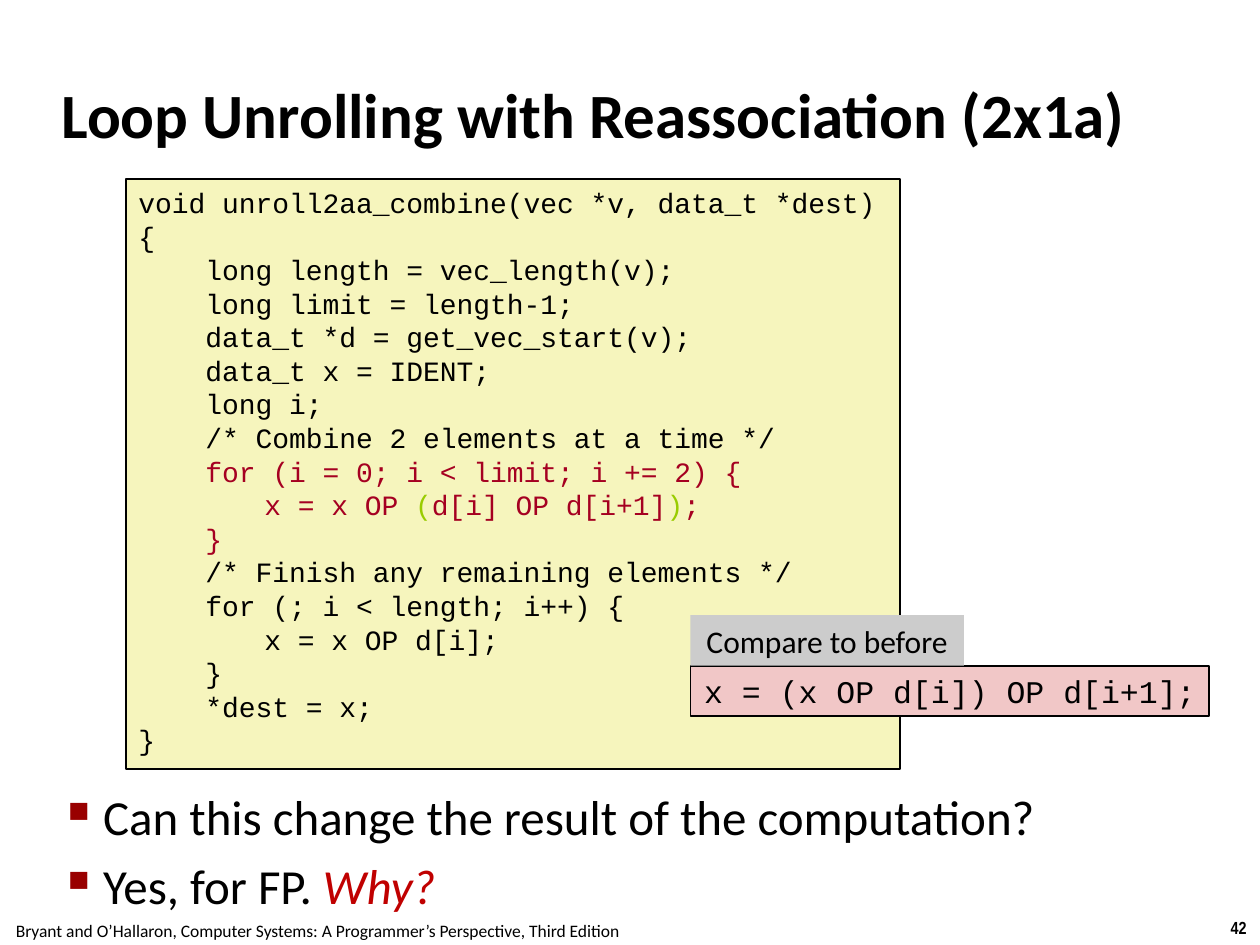
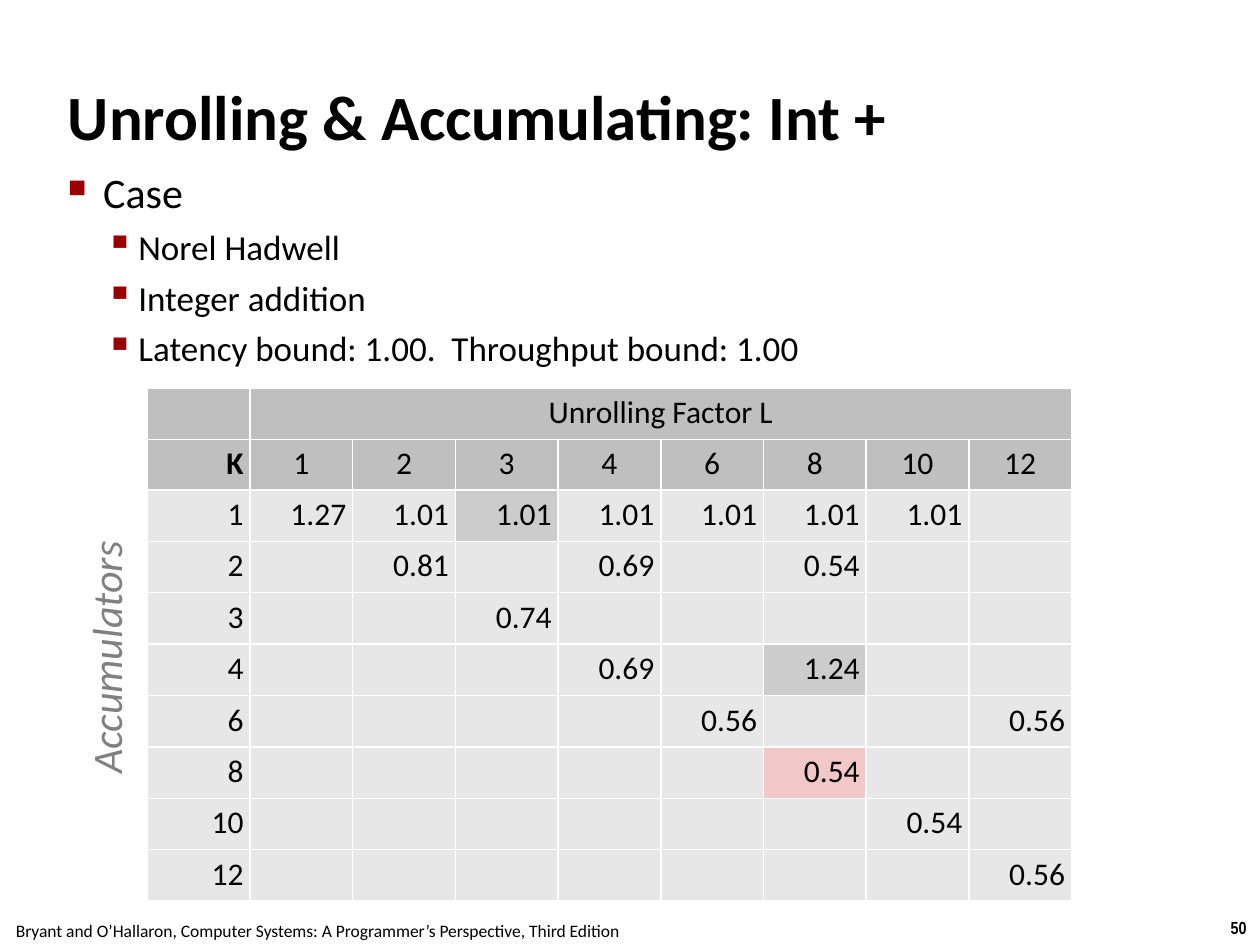
import pptx
import pptx.dml.color
import pptx.enum.shapes
import pptx.enum.text
import pptx.oxml
import pptx.oxml.ns
import pptx.util
from lxml import etree

Cm, Pt = pptx.util.Cm, pptx.util.Pt
ALIGN = pptx.enum.text.PP_ALIGN
ANCHOR = pptx.enum.text.MSO_ANCHOR

COLOURS = {
    "ink": "000000", "bullet": "990000", "why": "C00000", "loop": "A50021",
    "bracket": "99CC00", "code": "F6F5BD", "pink": "F1C7C7", "grey": "CCCCCC",
    "header": "BFBFBF", "cell": "E7E7E7", "white": "FFFFFF", "side": "808080",
}
BODY_FONT, CODE_FONT, NUMBER_FONT = "Calibri", "Courier New", "Arial Narrow"
FOOTER = "Bryant and O’Hallaron, Computer Systems: A Programmer’s Perspective, Third Edition"
TIGHT = (0.1, 0.1, 0.1, 0.1)
NORMAL = (0.25, 0.13, 0.25, 0.13)

# Each code line: indent level, then (text, colour) pieces
CODE = [
    (0, [("void unroll2aa_combine(vec *v, data_t *dest)", "ink")]),
    (0, [("{", "ink")]),
    (1, [("long length = vec_length(v);", "ink")]),
    (1, [("long limit = length-1;", "ink")]),
    (1, [("data_t *d = get_vec_start(v);", "ink")]),
    (1, [("data_t x = IDENT;", "ink")]),
    (1, [("long i;", "ink")]),
    (1, [("/* Combine 2 elements at a time */", "ink")]),
    (1, [("for (i = 0; i < limit; i += 2) {", "loop")]),
    (2, [("x = x OP ", "loop"), ("(", "bracket"), ("d[i] OP d[i+1]", "loop"),
         (")", "bracket"), (";", "loop")]),
    (1, [("}", "loop")]),
    (1, [("/* Finish any remaining elements */", "ink")]),
    (1, [("for (; i < length; i++) {", "ink")]),
    (2, [("x = x OP d[i];", "ink")]),
    (1, [("}", "ink")]),
    (1, [("*dest = x;", "ink")]),
    (0, [("}", "ink")]),
]
CODE_INDENTS = (0, 1.35, 2.54)

# Bulleted lines: level, size, then (text, colour, italic) pieces
QUESTIONS = [
    (0, 28, [("Can this change the result of the computation?", "ink", False)]),
    (0, 28, [("Yes, for FP. ", "ink", False), ("Why?", "why", True)]),
]
CASE = [
    (0, 24, [("Case", "ink", False)]),
    (1, 20, [("Norel Hadwell", "ink", False)]),
    (1, 20, [("Integer addition", "ink", False)]),
    (1, 20, [("Latency bound: 1.00.  Throughput bound: 1.00", "ink", False)]),
]
# Level: bullet, size in percent, left indent, hanging part, space before
BULLETS = [("■", 60, 0.71, 0.71, 6), ("▪", 110, 1.42, 0.66, 5)]

FACTORS = [1, 2, 3, 4, 6, 8, 10, 12]
# Accumulators K -> {unrolling factor L: cycles per element}
CYCLES = {
    1: {1: "1.27", 2: "1.01", 3: "1.01", 4: "1.01", 6: "1.01", 8: "1.01", 10: "1.01"},
    2: {2: "0.81", 4: "0.69", 8: "0.54"},
    3: {3: "0.74"},
    4: {4: "0.69", 8: "1.24"},
    6: {6: "0.56", 12: "0.56"},
    8: {8: "0.54"},
    10: {10: "0.54"},
    12: {12: "0.56"},
}
HIGHLIGHTS = {(1, 3): "grey", (4, 8): "grey", (8, 8): "pink"}
COLUMN_WIDTH, ROW_HEIGHT = 2.07, 1.02


def rgb(name):
    return pptx.dml.color.RGBColor.from_string(COLOURS[name])


def add_span(para, text, size, colour="ink", font=BODY_FONT, bold=False, italic=False):
    span = para.add_run()
    span.text = text
    span.font.size, span.font.name = Pt(size), font
    span.font.bold, span.font.italic = bold, italic
    span.font.color.rgb = rgb(colour)


def set_frame(frame, insets=NORMAL, wrap=True, anchor=ANCHOR.TOP):
    frame.auto_size = pptx.enum.text.MSO_AUTO_SIZE.NONE
    frame.word_wrap, frame.vertical_anchor = wrap, anchor
    (frame.margin_left, frame.margin_top,
     frame.margin_right, frame.margin_bottom) = map(Cm, insets)


def paragraphs(frame, count):
    return [frame.paragraphs[0]] + [frame.add_paragraph() for _ in range(count - 1)]


def add_label(page, place, text, size, **style):
    """Add one centred line of text that does not wrap."""
    box = page.shapes.add_textbox(*map(Cm, place))
    set_frame(box.text_frame, wrap=False)
    para = box.text_frame.paragraphs[0]
    para.alignment = ALIGN.CENTER
    add_span(para, text, size, **style)
    return box


def add_panel(page, place, fill, outlined=True):
    panel = page.shapes.add_shape(
        pptx.enum.shapes.MSO_SHAPE.RECTANGLE, *map(Cm, place))
    panel.shadow.inherit = False
    panel.fill.solid()
    panel.fill.fore_color.rgb = rgb(fill)
    if outlined:
        panel.line.color.rgb, panel.line.width = rgb("ink"), Pt(1)
    else:
        panel.line.fill.background()
    return panel


def add_callout(page, place, fill, text, font, outlined):
    frame = add_panel(page, place, fill, outlined).text_frame
    set_frame(frame, wrap=False)
    para = frame.paragraphs[0]
    para.alignment = ALIGN.CENTER
    add_span(para, text, 18, font=font)


def add_child(parent, tag, **attributes):
    return etree.SubElement(parent, pptx.oxml.ns.qn(tag), attributes)


def set_indent(para, left, hanging=0):
    properties = para._p.get_or_add_pPr()
    properties.set("marL", str(Cm(left)))
    properties.set("indent", str(-Cm(hanging)))
    return properties


def add_bullets(page, place, lines):
    frame = page.shapes.add_textbox(*map(Cm, place)).text_frame
    set_frame(frame, TIGHT)
    for para, (level, size, pieces) in zip(paragraphs(frame, len(lines)), lines):
        mark, percent, left, hanging, before = BULLETS[level]
        para.level, para.space_before = level, Pt(before)
        properties = set_indent(para, left, hanging)
        add_child(add_child(properties, "a:buClr"), "a:srgbClr", val=COLOURS["bullet"])
        add_child(properties, "a:buSzPct", val=str(percent * 1000))
        add_child(properties, "a:buChar", char=mark)
        for text, colour, italic in pieces:
            add_span(para, text, size, colour, italic=italic)


def add_page(deck, number, title, place):
    """Add a slide with its title, page number and footer."""
    page = deck.slides.add_slide(deck.slide_layouts[5])
    heading = page.shapes.title
    heading.left, heading.top, heading.width, heading.height = map(Cm, place)
    set_frame(heading.text_frame, TIGHT, anchor=ANCHOR.MIDDLE)
    para = heading.text_frame.paragraphs[0]
    para.alignment = ALIGN.LEFT
    add_span(para, title, 36, bold=True)
    add_label(page, (24.54, 18.36, 0.86, 0.69), str(number), 10,
              font=NUMBER_FONT, bold=True)
    add_label(page, (-0.05, 18.42, 12.9, 0.69), FOOTER, 10)
    return page


def add_code(page, place):
    frame = add_panel(page, place, "code").text_frame
    set_frame(frame)
    for para, (level, pieces) in zip(paragraphs(frame, len(CODE)), CODE):
        para.alignment, para.line_spacing = ALIGN.LEFT, Pt(19.2)
        set_indent(para, CODE_INDENTS[level])
        for text, colour in pieces:
            add_span(para, text, 16, colour, CODE_FONT)


def fill_cell(cell, text, fill, align, bold=False):
    properties = cell._tc.get_or_add_tcPr()
    for side in ("a:lnL", "a:lnR", "a:lnT", "a:lnB"):
        border = add_child(properties, side, w=str(Pt(1)))
        add_child(add_child(border, "a:solidFill"), "a:srgbClr", val=COLOURS["white"])
    cell.fill.solid()
    cell.fill.fore_color.rgb = rgb(fill)
    cell.margin_left = cell.margin_right = Cm(0.13)
    cell.margin_top = cell.margin_bottom = Cm(0.13)
    if text:
        para = cell.text_frame.paragraphs[0]
        para.alignment, para.line_spacing = align, 0.95
        add_span(para, text, 18, bold=bold)


def add_cycles_table(page, left, top):
    rows, columns = len(CYCLES) + 2, len(FACTORS) + 1
    table = page.shapes.add_table(
        rows, columns, Cm(left), Cm(top),
        Cm(COLUMN_WIDTH * columns), Cm(ROW_HEIGHT * rows)).table
    table.first_row = table.horz_banding = False
    for column in table.columns:
        column.width = Cm(COLUMN_WIDTH)
    for row in table.rows:
        row.height = Cm(ROW_HEIGHT)

    table.cell(0, 1).merge(table.cell(0, columns - 1))
    for column in range(columns):
        text = "Unrolling Factor L" if column == 1 else ""
        fill_cell(table.cell(0, column), text, "header", ALIGN.CENTER)
    fill_cell(table.cell(1, 0), "K", "header", ALIGN.RIGHT, bold=True)
    for column, factor in enumerate(FACTORS, 1):
        fill_cell(table.cell(1, column), str(factor), "header", ALIGN.CENTER)
    for row, (accumulators, cycles) in enumerate(CYCLES.items(), 2):
        fill_cell(table.cell(row, 0), str(accumulators), "cell", ALIGN.RIGHT)
        for column, factor in enumerate(FACTORS, 1):
            fill = HIGHLIGHTS.get((accumulators, factor), "cell")
            fill_cell(table.cell(row, column), cycles.get(factor, ""), fill, ALIGN.RIGHT)


def build_reassociation(deck):
    page = add_page(deck, 42, "Loop Unrolling with Reassociation (2x1a)",
                    (1.14, 1.22, 22.35, 2.11))
    add_bullets(page, (1.27, 15.75, 22.05, 1.6), QUESTIONS)
    add_code(page, (2.54, 3.61, 15.6, 11.89))
    add_callout(page, (13.92, 13.42, 10.46, 1.02), "pink",
                "x = (x OP d[i]) OP d[i+1];", CODE_FONT, True)
    add_callout(page, (13.92, 12.4, 5.51, 1.02), "grey",
                "Compare to before", BODY_FONT, False)


def build_accumulating(deck):
    page = add_page(deck, 50, "Unrolling & Accumulating: Int +",
                    (1.27, 1.27, 21.08, 2.11))
    add_bullets(page, (1.27, 3.25, 23.09, 3.94), CASE)
    add_cycles_table(page, 2.97, 7.82)
    side_label = add_label(page, (-0.51, 12.62, 5.26, 1.27), "Accumulators", 24,
                           colour="side", italic=True)
    side_label.rotation = 270


def main():
    deck = pptx.Presentation()
    deck.slide_width, deck.slide_height = Cm(25.4), Cm(19.05)
    build_reassociation(deck)
    build_accumulating(deck)
    deck.save("out.pptx")


if __name__ == "__main__":
    main()
